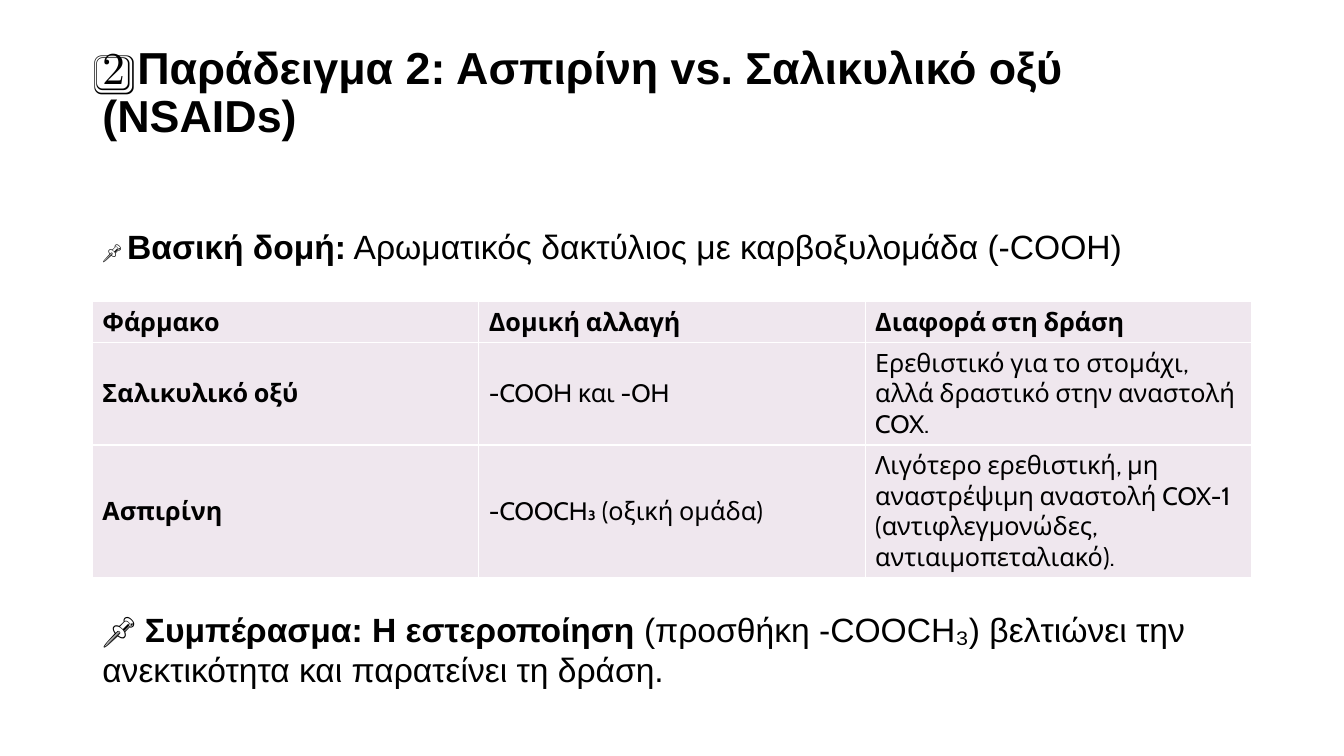
from dataclasses import dataclass

from lxml import etree
from pptx import Presentation
from pptx.dml.color import RGBColor
from pptx.enum import text
from pptx.oxml import ns
from pptx.util import Pt


@dataclass(frozen=True)
class Theme:
    ink: RGBColor = RGBColor(0x00, 0x00, 0x00)
    cell: RGBColor = RGBColor(0xEF, 0xE7, 0xEE)
    border: str = "FFFFFF"
    border_width: float = 0.96
    font: str = "Arial"
    table_font: str = "Cabin"
    title_size: float = 32
    note_size: float = 24
    table_size: float = 18


@dataclass(frozen=True)
class Note:
    top: float
    height: float
    pin_size: float
    lead: str
    rest: str


THEME = Theme()
LEFT, WIDTH = 66, 828
TABLE_TOP = 215.5
ROW_HEIGHTS = (28.8, 73, 95)

TITLE = "2️⃣ Παράδειγμα 2: Ασπιρίνη vs. Σαλικυλικό οξύ (NSAIDs)"
ROWS = (
    ("Φάρμακο", "Δομική αλλαγή", "Διαφορά στη δράση"),
    ("Σαλικυλικό οξύ", "-COOH και -OH",
     "Ερεθιστικό για το στομάχι, αλλά δραστικό στην αναστολή COX."),
    ("Ασπιρίνη", "-COOCH₃ (οξική ομάδα)",
     "Λιγότερο ερεθιστική, μη αναστρέψιμη αναστολή COX-1 "
     "(αντιφλεγμονώδες, αντιαιμοπεταλιακό)."),
)
NOTES = (
    Note(157.5, 36, 14, "Βασική δομή:",
         " Αρωματικός δακτύλιος με καρβοξυλομάδα (-COOH)"),
    Note(431, 65, 24, "Συμπέρασμα: Η εστεροποίηση",
         " (προσθήκη -COOCH₃) βελτιώνει την ανεκτικότητα και παρατείνει τη δράση."),
)


def style_font(font, name: str, size: float, bold: bool) -> None:
    font.name = name
    font.size = Pt(size)
    font.bold = bold
    font.color.rgb = THEME.ink


def fill_title(slide) -> None:
    title = slide.shapes.title
    title.left, title.top, title.width, title.height = Pt(LEFT), Pt(28.8), Pt(WIDTH), Pt(77)
    frame = title.text_frame
    frame.text = TITLE
    frame.word_wrap = True
    frame.auto_size = text.MSO_AUTO_SIZE.NONE
    frame.vertical_anchor = text.MSO_ANCHOR.MIDDLE
    paragraph = frame.paragraphs[0]
    paragraph.alignment = text.PP_ALIGN.LEFT
    paragraph.line_spacing = 0.9
    style_font(paragraph.font, THEME.font, THEME.title_size, True)


def add_note(slide, note: Note) -> None:
    """Add a pinned remark with a bold lead-in."""
    box = slide.shapes.add_textbox(Pt(LEFT), Pt(note.top), Pt(WIDTH), Pt(note.height))
    frame = box.text_frame
    frame.word_wrap = True
    frame.vertical_anchor = text.MSO_ANCHOR.MIDDLE
    paragraph = frame.paragraphs[0]
    for words, size, bold in (
        ("📌 ", note.pin_size, False),
        (note.lead, THEME.note_size, True),
        (note.rest, THEME.note_size, False),
    ):
        run = paragraph.add_run()
        run.text = words
        style_font(run.font, THEME.font, size, bold)


def add_borders(cell) -> None:
    properties = cell._tc.get_or_add_tcPr()
    for side in ("a:lnL", "a:lnR", "a:lnT", "a:lnB"):
        line = etree.SubElement(properties, ns.qn(side), w=str(Pt(THEME.border_width)))
        fill = etree.SubElement(line, ns.qn("a:solidFill"))
        etree.SubElement(fill, ns.qn("a:srgbClr"), val=THEME.border)


def add_drug_table(slide) -> None:
    table = slide.shapes.add_table(
        len(ROWS), len(ROWS[0]), Pt(LEFT), Pt(TABLE_TOP), Pt(WIDTH), Pt(sum(ROW_HEIGHTS))
    ).table
    for row_index, (values, height) in enumerate(zip(ROWS, ROW_HEIGHTS)):
        table.rows[row_index].height = Pt(height)
        for column_index, value in enumerate(values):
            cell = table.cell(row_index, column_index)
            cell.text = value
            cell.vertical_anchor = text.MSO_ANCHOR.MIDDLE
            add_borders(cell)
            cell.fill.solid()
            cell.fill.fore_color.rgb = THEME.cell
            bold = row_index == 0 or column_index == 0
            style_font(cell.text_frame.paragraphs[0].font,
                       THEME.table_font, THEME.table_size, bold)


def main() -> None:
    presentation = Presentation()
    presentation.slide_width, presentation.slide_height = Pt(960), Pt(540)
    title_only = presentation.slide_layouts.get_by_name("Title Only")
    slide = presentation.slides.add_slide(title_only)
    fill_title(slide)
    add_drug_table(slide)
    for note in NOTES:
        add_note(slide, note)
    presentation.save("out.pptx")


if __name__ == "__main__":
    main()
